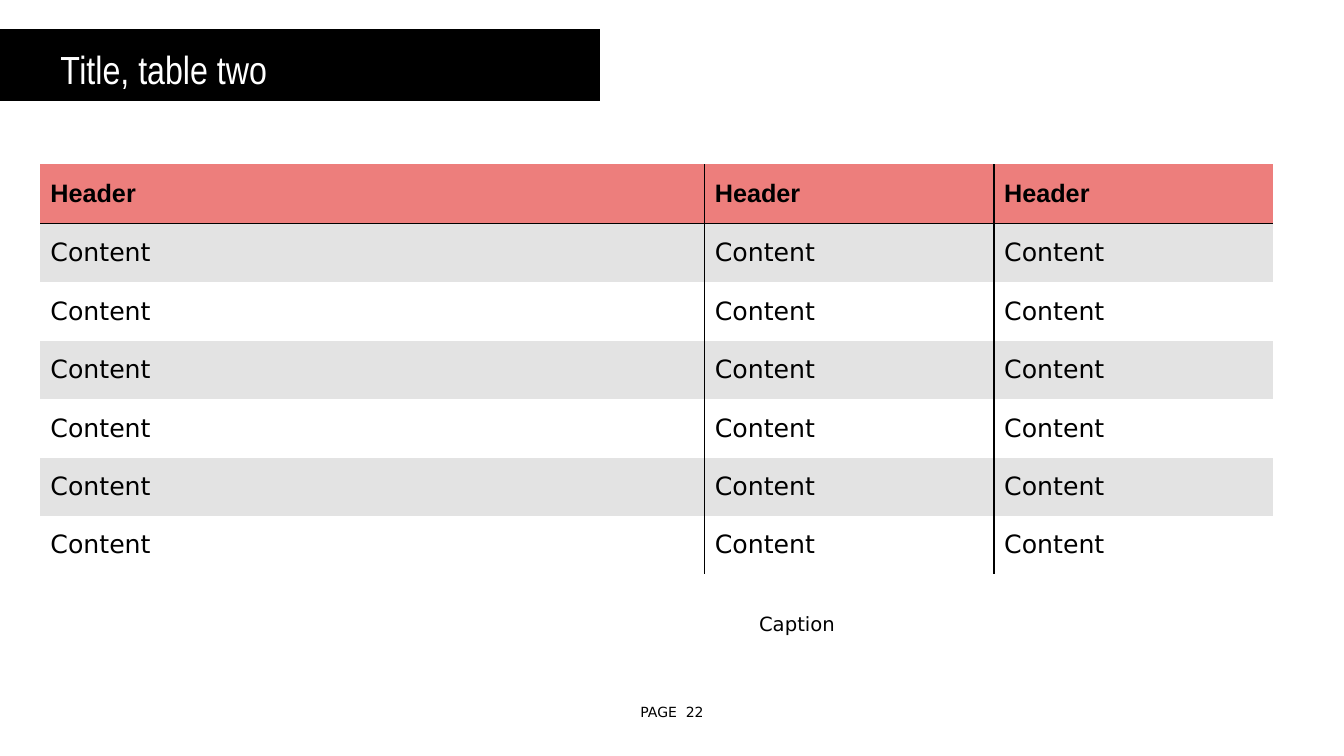
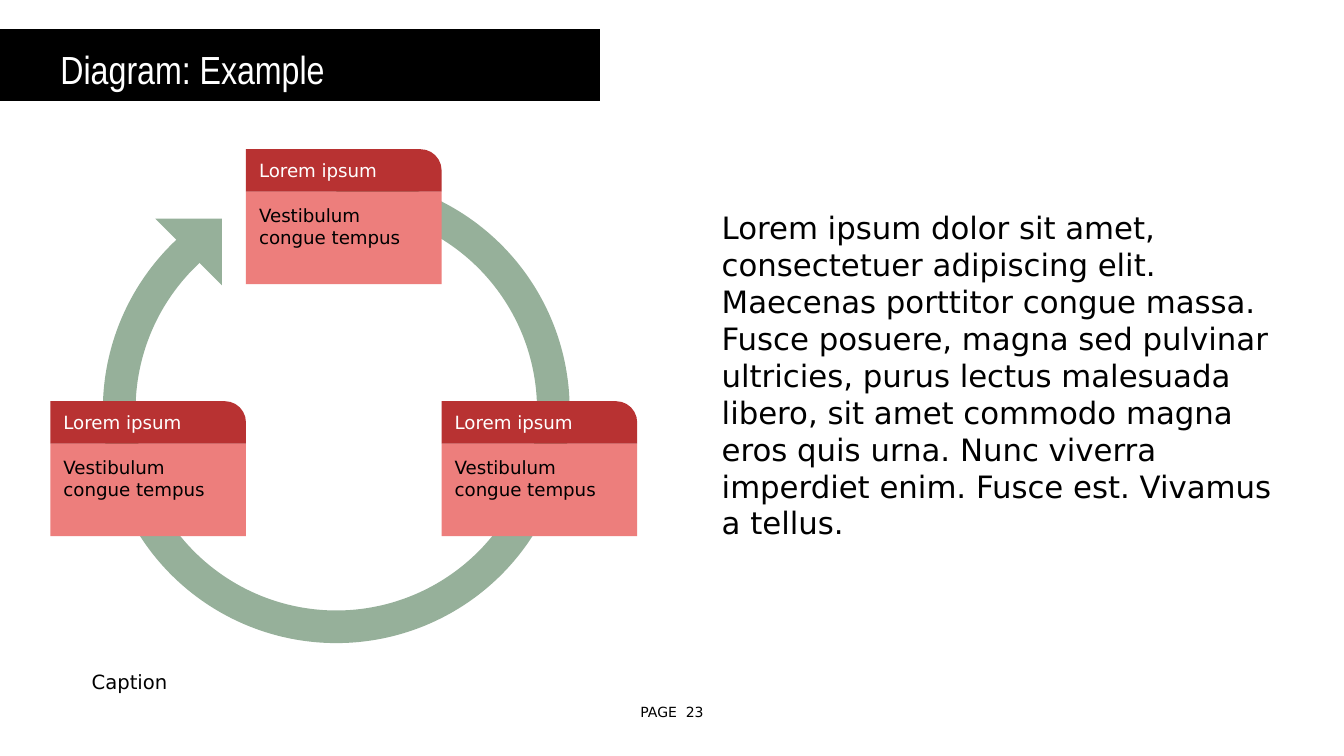
from lxml import etree
from pptx import Presentation
from pptx.dml.color import RGBColor
from pptx.enum.shapes import MSO_SHAPE as Preset
from pptx.enum.text import MSO_ANCHOR as Anchor, PP_ALIGN as Align
from pptx.oxml.ns import qn
from pptx.util import Inches, Pt

BLACK = RGBColor(0x00, 0x00, 0x00)
WHITE = RGBColor(0xFF, 0xFF, 0xFF)
GREY = RGBColor(0xE3, 0xE3, 0xE3)
PINK = RGBColor(0xED, 0x7E, 0x7C)
RED = RGBColor(0xB8, 0x32, 0x32)
GREEN = RGBColor(0x96, 0xB0, 0x9A)
BODY_FONT = "DejaVu Sans"


def write(frame, text, size, font=BODY_FONT, color=BLACK, bold=False,
          align=Align.LEFT, anchor=Anchor.TOP, insets=(0.1, 0.05, 0.1, 0.05),
          indent=0, spacing=1.0):
    frame.word_wrap = True
    frame.vertical_anchor = anchor
    (frame.margin_left, frame.margin_top,
     frame.margin_right, frame.margin_bottom) = map(Inches, insets)
    paragraph = frame.paragraphs[0]
    paragraph.alignment = align
    paragraph.line_spacing = spacing
    if indent:
        paragraph._p.get_or_add_pPr().set("marL", str(Inches(indent)))
    run = paragraph.add_run()
    run.text = text
    run.font.size = Pt(size)
    run.font.name = font
    run.font.bold = bold
    run.font.color.rgb = color


def add_block(shapes, preset, box, fill):
    """Add a flat, borderless shape; box is left, top, width, height in inches."""
    block = shapes.add_shape(preset, *map(Inches, box))
    block.shadow.inherit = False
    block.fill.solid()
    block.fill.fore_color.rgb = fill
    block.line.fill.background()
    return block


prs = Presentation()
prs.slide_width = Inches(13.33)
prs.slide_height = Inches(7.5)
blank = prs.slide_layouts[6]

# Title band, page number and caption on both slides
slides = []
for title, page, caption_left, caption_top in (
    ("Title, table two", "PAGE  22", 7.43, 5.97),
    ("Diagram: Example", "PAGE  23", 0.81, 6.55),
):
    slide = prs.slides.add_slide(blank)
    slides.append(slide)
    band = add_block(slide.shapes, Preset.RECTANGLE, (-0.05, 0.29, 6, 0.71), BLACK)
    write(band.text_frame, title, 28, font="Arial Narrow", color=WHITE,
          anchor=Anchor.MIDDLE, insets=(0.4, 0.05, 0.1, 0.05), indent=0.25, spacing=1.15)
    footer = slide.shapes.add_textbox(Inches(6.11), Inches(6.93), Inches(1.11), Inches(0.27))
    write(footer.text_frame, page, 10, align=Align.CENTER, anchor=Anchor.MIDDLE)
    caption = slide.shapes.add_textbox(
        Inches(caption_left), Inches(caption_top), Inches(5.21), Inches(0.38))
    write(caption.text_frame, "Caption", 14, insets=(0.1,) * 4)
table_slide, diagram_slide = slides

# Table
column_widths = (6.59, 2.87, 2.77)
row_heights = (0.59,) + (0.58,) * 6
table = table_slide.shapes.add_table(
    len(row_heights), len(column_widths), Inches(0.4), Inches(1.63),
    Inches(sum(column_widths)), Inches(sum(row_heights))).table
for column, width in zip(table.columns, column_widths):
    column.width = Inches(width)
last_column = len(column_widths) - 1
for r, height in enumerate(row_heights):
    table.rows[r].height = Inches(height)
    is_header = r == 0
    for c in range(len(column_widths)):
        cell = table.cell(r, c)
        ruled_edges = {"lnL": c > 0, "lnR": c < last_column, "lnT": r == 1, "lnB": is_header}
        properties = cell._tc.get_or_add_tcPr()
        for edge, ruled in ruled_edges.items():
            rule = etree.SubElement(properties, qn(f"a:{edge}"), w=str(Pt(1)))
            if ruled:
                ink = etree.SubElement(rule, qn("a:solidFill"))
                etree.SubElement(ink, qn("a:srgbClr"), val=str(BLACK))
            else:
                etree.SubElement(rule, qn("a:noFill"))
        cell.fill.solid()
        cell.fill.fore_color.rgb = PINK if is_header else GREY if r % 2 else WHITE
        write(cell.text_frame, "Header" if is_header else "Content", 18,
              font="Arial" if is_header else BODY_FONT, bold=is_header)
        cell.vertical_anchor = Anchor.MIDDLE
        cell.margin_left = cell.margin_right = Inches(0.1)
        cell.margin_top = cell.margin_bottom = Inches(0.05)

# Cycle arrow
cycle = diagram_slide.shapes.add_group_shape().shapes
ring = add_block(cycle, Preset.BLOCK_ARC, (1.02, 1.75, 4.63, 4.63), GREEN)
for i, value in enumerate((54, 30.13, 0.07)):
    ring.adjustments[i] = value
arrowhead = add_block(cycle, Preset.RIGHT_TRIANGLE, (1.54, 2.17, 0.66, 0.66), GREEN)
ring.rotation = arrowhead.rotation = 180

# Cards on the cycle
CARD_WIDTH, HEAD_HEIGHT, DETAIL_HEIGHT = 1.94, 0.42, 0.92
card_insets = (0.13,) * 4
for step, top in ((2, 3.98), (1, 1.48), (0, 3.98)):
    left = 0.5 + step * CARD_WIDTH
    card = diagram_slide.shapes.add_group_shape().shapes
    detail = add_block(card, Preset.RECTANGLE,
                       (left, top + HEAD_HEIGHT, CARD_WIDTH, DETAIL_HEIGHT), PINK)
    write(detail.text_frame, "Vestibulum congue tempus", 13, insets=card_insets)
    head = add_block(card, Preset.ROUND_1_RECTANGLE,
                     (left, top, CARD_WIDTH, HEAD_HEIGHT), RED)
    head.adjustments[0] = 0.5
    write(head.text_frame, "Lorem ipsum", 13, color=WHITE,
          anchor=Anchor.MIDDLE, insets=card_insets)

# Explanation beside the cycle
explanation = diagram_slide.shapes.add_textbox(
    Inches(7.06), Inches(2.02), Inches(5.65), Inches(4.08))
write(explanation.text_frame,
      "Lorem ipsum dolor sit amet, consectetuer adipiscing elit. Maecenas porttitor "
      "congue massa. Fusce posuere, magna sed pulvinar ultricies, purus lectus malesuada "
      "libero, sit amet commodo magna eros quis urna. Nunc viverra imperdiet enim. "
      "Fusce est. Vivamus a tellus.", 22)

prs.save("out.pptx")
